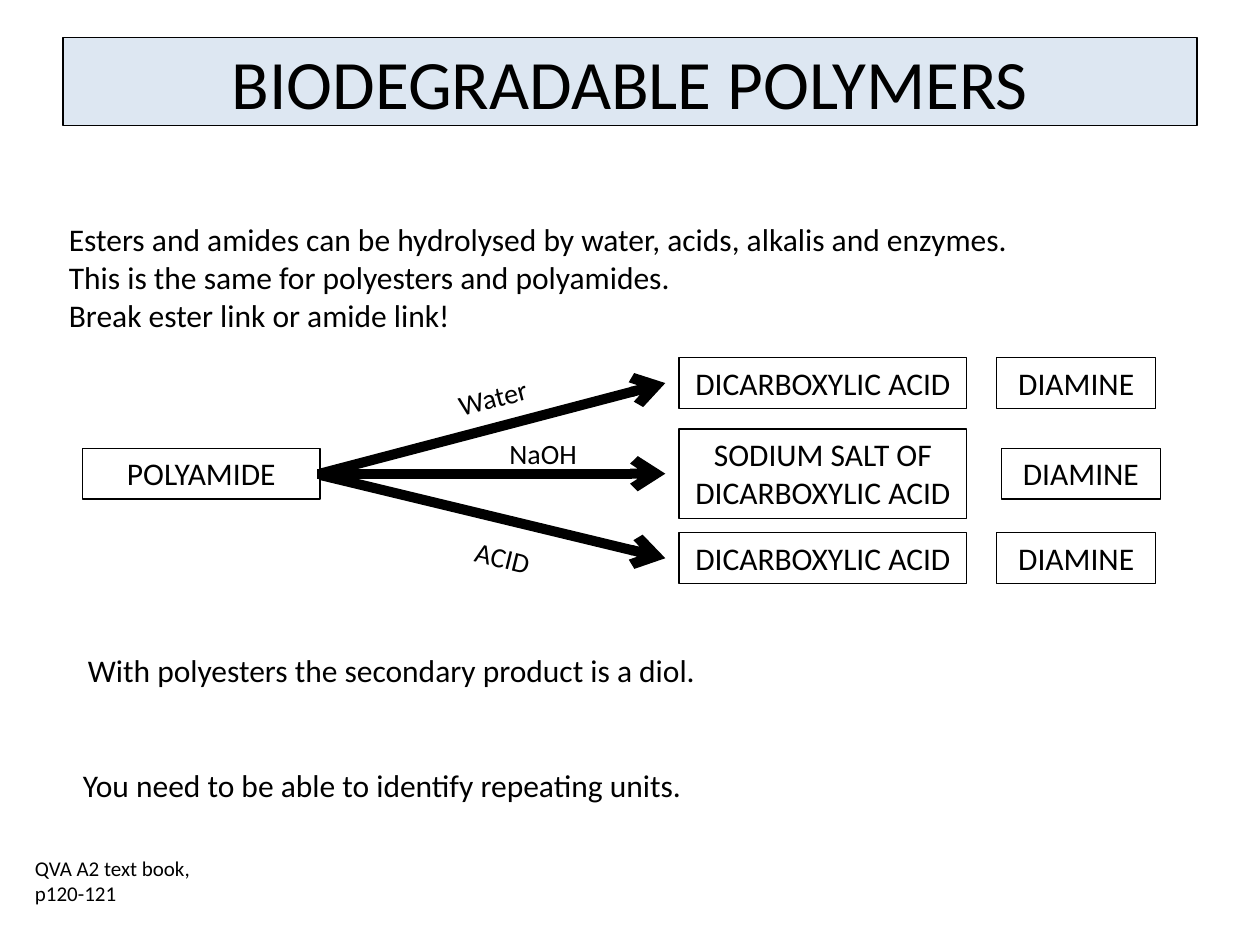
"""Build a slide on how polyamides are broken down."""
from dataclasses import dataclass

from lxml import etree
from pptx import Presentation
from pptx.dml.color import RGBColor
from pptx.enum.shapes import MSO_CONNECTOR, MSO_SHAPE
from pptx.enum.text import MSO_ANCHOR, MSO_AUTO_SIZE, PP_ALIGN
from pptx.oxml.ns import qn
from pptx.util import Pt

STRAIGHT = MSO_CONNECTOR.STRAIGHT
RECT = MSO_SHAPE.RECTANGLE
MIDDLE, TOP = MSO_ANCHOR.MIDDLE, MSO_ANCHOR.TOP
FIXED, GROW = MSO_AUTO_SIZE.NONE, MSO_AUTO_SIZE.SHAPE_TO_FIT_TEXT
LEFT, CENTER = PP_ALIGN.LEFT, PP_ALIGN.CENTER


@dataclass(frozen=True)
class Theme:
    font: str = "Calibri"
    ink: RGBColor = RGBColor(0, 0, 0)
    tint: RGBColor = RGBColor(0x4F, 0x81, 0xBD)
    alpha: int = 19000
    title: float = 39.6
    body: float = 18
    label: float = 16
    small: float = 12
    border: float = 0.75
    arrow: float = 5.75


@dataclass(frozen=True)
class Note:
    left: float
    top: float
    width: float
    height: float
    lines: tuple[str, ...]
    size: float
    align: PP_ALIGN = LEFT
    turn: float = 0


@dataclass(frozen=True)
class Route:
    mid: float
    acid: str
    height: float
    side: float
    start: tuple[float, float]
    label: Note


THEME = Theme()
BOX = 29.1
ACID_LEFT, ACID_WIDTH = 388.1, 164.4
SIDE_WIDTH = 90.8
TIP = 380.2

NOTES = (
    Note(32.3, 122.4, 652.3, 72.7,
         ("Esters and amides can be hydrolysed by water, acids, alkalis and enzymes.",
          "This is the same for polyesters and polyamides.",
          "Break ester link or amide link!"), THEME.body),
    Note(12.9, 485.3, 114.5, 36, ("QVA A2 text book, p120-121",), THEME.small),
    Note(43.2, 368.2, 590.4, BOX,
         ("With polyesters the secondary product is a diol.",), THEME.body),
    Note(40.3, 434.3, 590.4, BOX,
         ("You need to be able to identify repeating units.",), THEME.body),
)
ROUTES = (
    Route(218.9, "DICARBOXYLIC ACID", BOX, 569.6, (182.9, 270.7),
          Note(232.6, 213.8, 97.9, 26.6, ("Water",), THEME.label, CENTER, 345.3)),
    Route(270.7, "SODIUM SALT OF DICARBOXYLIC ACID", 51, 572.3, (181.4, 270.7),
          Note(261.4, 246.2, 97.9, 26.6, ("NaOH",), THEME.label, CENTER)),
    Route(319, "DICARBOXYLIC ACID", BOX, 569.6, (182.9, 271.4),
          Note(238.3, 305.3, 97.9, 26.6, ("ACID",), THEME.label, CENTER, 13.9)),
)


def write(shape, lines: tuple[str, ...], size: float, align: PP_ALIGN) -> None:
    """Write each line as one paragraph with one run."""
    frame = shape.text_frame
    frame.word_wrap = True
    for index, line in enumerate(lines):
        para = frame.add_paragraph() if index else frame.paragraphs[0]
        para.alignment = align
        run = para.add_run()
        run.text = line
        run.font.name = THEME.font
        run.font.size = Pt(size)
        run.font.color.rgb = THEME.ink


def border(shape) -> None:
    """Give a shape its thin outline."""
    shape.line.color.rgb = THEME.ink
    shape.line.width = Pt(THEME.border)


def draw_title(slide, text: str) -> None:
    """Place and format the title on its pale band."""
    title = slide.shapes.title
    title.left, title.top, title.width, title.height = Pt(36), Pt(21.6), Pt(648), Pt(50)
    title.fill.solid()
    title.fill.fore_color.rgb = THEME.tint
    color = title.element.spPr.find(f"{qn('a:solidFill')}/{qn('a:srgbClr')}")
    etree.SubElement(color, qn("a:alpha"), val=str(THEME.alpha))
    border(title)
    write(title, (text,), THEME.title, CENTER)
    title.text_frame.auto_size = FIXED
    title.text_frame.vertical_anchor = MIDDLE


def draw_note(slide, note: Note) -> None:
    """Draw free text, turned when asked."""
    shape = slide.shapes.add_textbox(
        Pt(note.left), Pt(note.top), Pt(note.width), Pt(note.height))
    shape.rotation = note.turn
    write(shape, note.lines, note.size, note.align)
    shape.text_frame.auto_size = GROW


def draw_box(slide, left: float, mid: float, width: float, height: float, text: str) -> None:
    """Draw an outlined box centred on a height."""
    shape = slide.shapes.add_shape(
        RECT, Pt(left), Pt(mid - height / 2), Pt(width), Pt(height))
    shape.shadow.inherit = False
    shape.fill.background()
    border(shape)
    write(shape, (text,), THEME.body, CENTER)
    shape.text_frame.auto_size = GROW
    shape.text_frame.vertical_anchor = TOP


def draw_arrow(slide, start: tuple[float, float], end: tuple[float, float]) -> None:
    """Draw a thick line with an open head."""
    arrow = slide.shapes.add_connector(
        STRAIGHT, *(Pt(value) for value in (*start, *end)))
    arrow.line.color.rgb = THEME.ink
    arrow.line.width = Pt(THEME.arrow)
    props = arrow.element.spPr
    etree.SubElement(props.find(qn("a:ln")), qn("a:tailEnd"), type="arrow")
    etree.SubElement(props, qn("a:effectLst"))


def draw_route(slide, route: Route) -> None:
    """Draw one reaction from arrow to products."""
    draw_arrow(slide, route.start, (TIP, route.mid))
    draw_box(slide, ACID_LEFT, route.mid, ACID_WIDTH, route.height, route.acid)
    draw_box(slide, route.side, route.mid, SIDE_WIDTH, BOX, "DIAMINE")
    draw_note(slide, route.label)


def main() -> None:
    """Build and save the slide."""
    deck = Presentation()
    deck.slide_width, deck.slide_height = Pt(720), Pt(540)
    slide = deck.slides.add_slide(deck.slide_layouts[5])
    draw_title(slide, "BIODEGRADABLE POLYMERS")
    for note in NOTES:
        draw_note(slide, note)
    draw_box(slide, 47.2, 270.7, 135.7, BOX, "POLYAMIDE")
    for route in ROUTES:
        draw_route(slide, route)
    deck.save("out.pptx")


if __name__ == "__main__":
    main()
